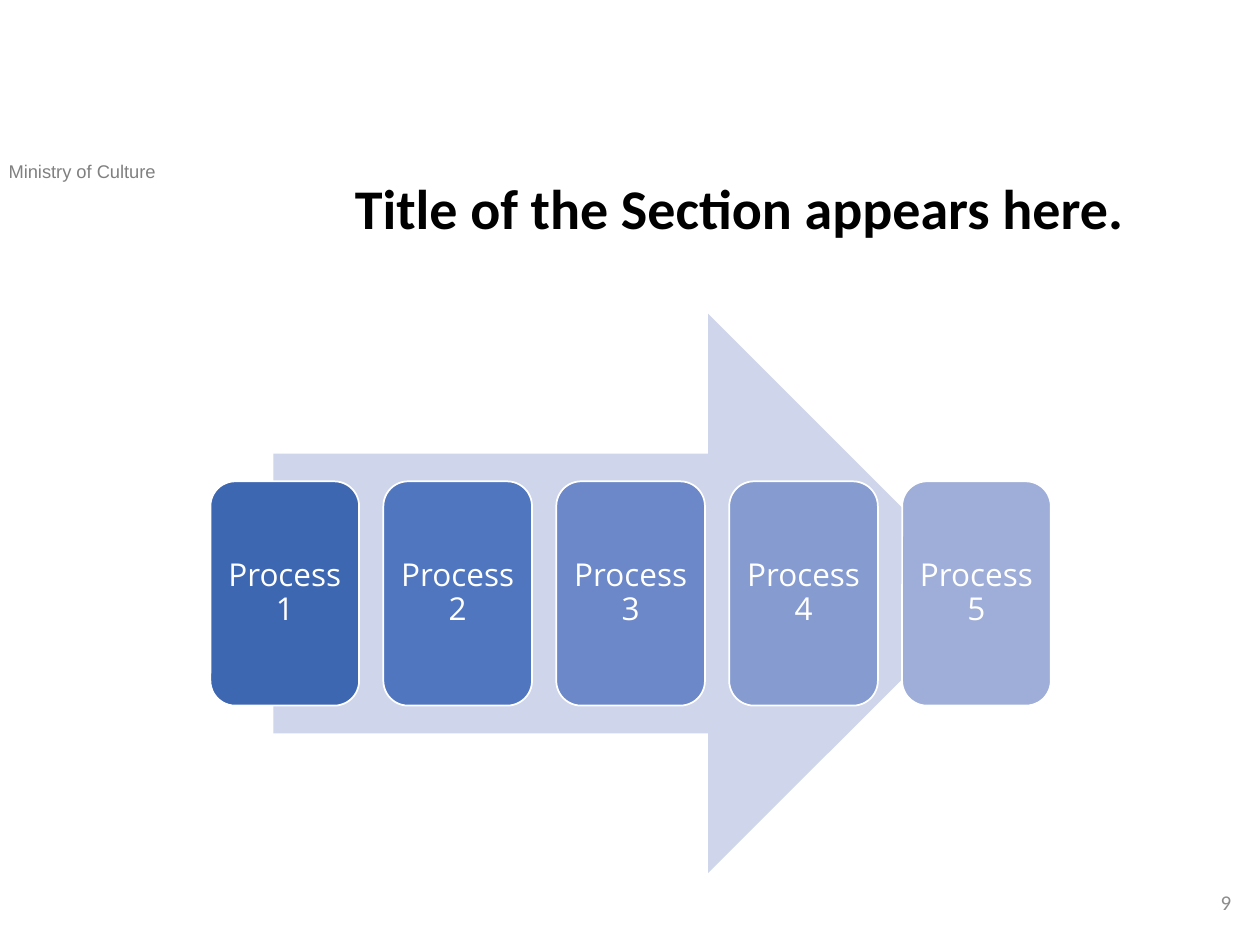
from pptx import Presentation
from pptx.dml.color import RGBColor
from pptx.enum.shapes import MSO_SHAPE as Shape
from pptx.enum.text import MSO_ANCHOR as Anchor, MSO_AUTO_SIZE as AutoSize, PP_ALIGN as Align
from pptx.util import Pt

PX = 9144  # EMU per px, at 100 px to the inch
STEP_FILLS = ["3E67B2", "5176C0", "6C88C8", "869BD0", "9FAED8"]


def color(value):
    return RGBColor.from_string(value)


def emu(*lengths):
    return [round(length * PX) for length in lengths]


def write(shape, text, *, font, size, ink, bold=False, align=Align.LEFT,
          anchor=Anchor.TOP, spacing=1.0, insets=(10, 5, 10, 5)):
    frame = shape.text_frame
    frame.word_wrap = True
    frame.auto_size = AutoSize.NONE
    frame.vertical_anchor = anchor
    (frame.margin_left, frame.margin_top,
     frame.margin_right, frame.margin_bottom) = emu(*insets)
    para = frame.paragraphs[0]
    para.alignment = align
    para.line_spacing = spacing
    para.space_before = Pt(0)
    span = para.add_run()
    span.text = text
    span.font.name, span.font.size, span.font.bold = font, Pt(size), bold
    span.font.color.rgb = color(ink)


def add_block(page, kind, box, fill, line=None):
    block = page.shapes.add_shape(kind, *emu(*box))
    block.shadow.inherit = False
    block.fill.solid()
    block.fill.fore_color.rgb = color(fill)
    if line:
        block.line.color.rgb = color(line)
        block.line.width = Pt(1)
    else:
        block.line.fill.background()
    return block


def add_title(page, box):
    title = page.shapes.title
    title.left, title.top, title.width, title.height = emu(*box)
    write(title, "Title of the Section appears here.", font="Calibri", size=32,
          ink="000000", bold=True, align=Align.CENTER, spacing=0.9)


def add_label(page, box, text, **style):
    write(page.shapes.add_textbox(*emu(*box)), text, **style)


def add_process(page, box):
    left, top, width, height = box
    # Arrow behind the steps
    arrow_width = 567
    add_block(page, Shape.RIGHT_ARROW,
              (left + (width - arrow_width) / 2, top, arrow_width, height), "CFD5EA")
    # Evenly spaced steps, centred on the arrow
    step_width, step_height = 118, 178
    pitch = (width - step_width) / (len(STEP_FILLS) - 1)
    step_top = top + (height - step_height) / 2
    for index, fill in enumerate(STEP_FILLS):
        step = add_block(page, Shape.ROUNDED_RECTANGLE,
                         (left + index * pitch, step_top, step_width, step_height),
                         fill, line="FFFFFF")
        write(step, f"Process {index + 1}", font="Open Sans", size=18, ink="FFFFFF",
              align=Align.CENTER, anchor=Anchor.MIDDLE, spacing=0.9, insets=(7, 7, 7, 7))


def main():
    deck = Presentation()
    deck.slide_width, deck.slide_height = emu(1000, 750)
    page = deck.slides.add_slide(deck.slide_layouts[5])  # Title Only

    # Header and page number
    add_label(page, (-3, 122, 218, 28), "Ministry of Culture",
              font="Arial", size=10.5, ink="808080")
    add_label(page, (762, 696, 225, 40), "9", font="Calibri", size=12, ink="8C8C8C",
              align=Align.RIGHT, anchor=Anchor.MIDDLE)

    # Process diagram and title
    add_process(page, (167, 249, 667, 444))
    add_title(page, (264, 139, 646, 79))
    deck.save("out.pptx")


if __name__ == "__main__":
    main()
